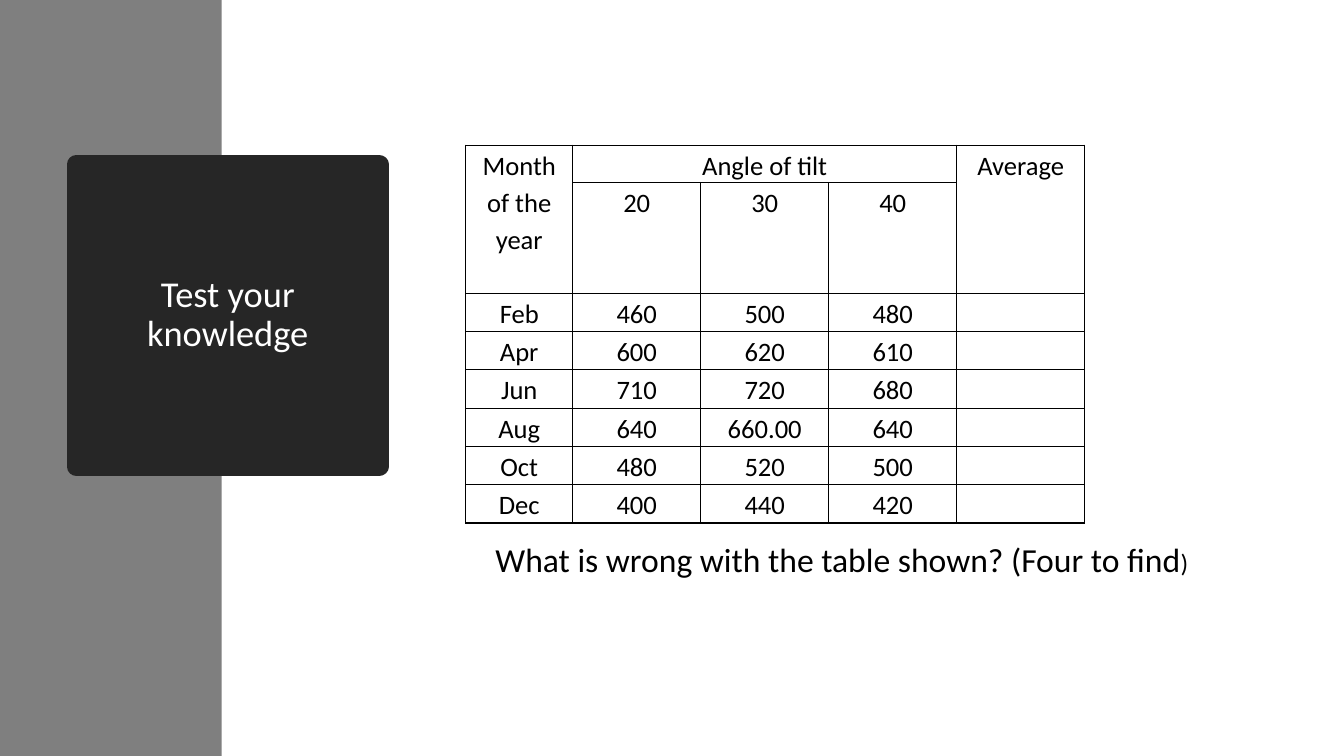
from lxml.etree import SubElement
from pptx import Presentation
from pptx.dml.color import RGBColor
from pptx.enum.shapes import MSO_SHAPE
from pptx.enum.text import MSO_ANCHOR, PP_ALIGN
from pptx.oxml import parse_xml
from pptx.oxml.ns import nsdecls, qn
from pptx.util import Inches, Pt

# Content
TITLE = "Test your knowledge"
QUESTION = [("What is wrong with the table shown? (Four to find", 24), (")", 18)]
ROWS = [
    ("Month of the year", "Angle of tilt", "", "", "Average"),
    ("", "20", "30", "40", ""),
    ("Feb", "460", "500", "480", ""),
    ("Apr", "600", "620", "610", ""),
    ("Jun", "710", "720", "680", ""),
    ("Aug", "640", "660.00", "640", ""),
    ("Oct", "480", "520", "500", ""),
    ("Dec", "400", "440", "420", ""),
]
MERGES = [((0, 0), (1, 0)), ((0, 1), (0, 3)), ((0, 4), (1, 4))]
COL_WIDTHS = [1.06] + [1.27] * 4
ROW_HEIGHTS = [0.37, 1.1] + [0.38] * 6

FONT = "Calibri"
GRAY = RGBColor(0x7F, 0x7F, 0x7F)
DARK = RGBColor(0x26, 0x26, 0x26)
WHITE = RGBColor(0xFF, 0xFF, 0xFF)
BLACK = RGBColor(0, 0, 0)


def format_paragraph(p, size, color, spacing, before=0):
    p.alignment = PP_ALIGN.CENTER
    p.line_spacing = spacing
    p.space_before = Pt(before)
    for r in p.runs:
        r.font.name = FONT
        r.font.size = Pt(size)
        r.font.color.rgb = color


def add_block(s, left, top, width, height, color):
    sp = s.shapes.add_shape(MSO_SHAPE.RECTANGLE, Inches(left), Inches(top),
                            Inches(width), Inches(height))
    sp.shadow.inherit = False
    sp.fill.solid()
    sp.fill.fore_color.rgb = color
    sp.line.fill.background()
    return sp


def set_borders(cell):
    tcPr = cell._tc.get_or_add_tcPr()
    for i, side in enumerate(("lnL", "lnR", "lnT", "lnB")):
        tcPr.insert(i, parse_xml(
            f'<a:{side} {nsdecls("a")} w="{Pt(1)}"><a:solidFill>'
            f'<a:srgbClr val="{BLACK}"/></a:solidFill></a:{side}>'))


prs = Presentation()
prs.slide_width, prs.slide_height = Inches(13.33), Inches(7.5)
s = prs.slides.add_slide(prs.slide_layouts[6])

# Side band and title block with rounded outline corners
add_block(s, 0, 0, 2.2, 7.5, GRAY)
title = add_block(s, 0.76, 1.63, 3, 3, DARK)
title.line.color.rgb = DARK
title.line.width = Pt(13.75)
SubElement(title.line._ln, qn("a:round"))
tf = title.text_frame
tf.word_wrap = True
tf.vertical_anchor = MSO_ANCHOR.MIDDLE
tf.text = TITLE
format_paragraph(tf.paragraphs[0], 26, WHITE, 0.9)

# Question
question = s.shapes.add_textbox(Inches(4.42), Inches(5.34), Inches(7.86), Inches(1.41))
tf = question.text_frame
tf.word_wrap = True
p = tf.paragraphs[0]
for text, size in QUESTION:
    p.add_run().text = text
format_paragraph(p, 24, BLACK, 0.9, 10)
for r, (text, size) in zip(p.runs, QUESTION):
    r.font.size = Pt(size)

# Table
table = s.shapes.add_table(len(ROWS), len(COL_WIDTHS), Inches(4.62), Inches(1.44),
                           Inches(sum(COL_WIDTHS)), Inches(sum(ROW_HEIGHTS))).table
table.first_row = table.horz_banding = False
for col, width in zip(table.columns, COL_WIDTHS):
    col.width = Inches(width)
for row, height in zip(table.rows, ROW_HEIGHTS):
    row.height = Inches(height)
for i, row in enumerate(ROWS):
    for j, text in enumerate(row):
        cell = table.cell(i, j)
        cell.margin_top = cell.margin_bottom = 0
        cell.margin_left = cell.margin_right = Inches(0 if j == 0 and i > 1 else 0.08)
        cell.fill.background()
        set_borders(cell)
        if text:
            cell.text = text
            format_paragraph(cell.text_frame.paragraphs[0], 19, BLACK, 1.15, 6)
for first, last in MERGES:
    table.cell(*first).merge(table.cell(*last))

prs.save("out.pptx")
